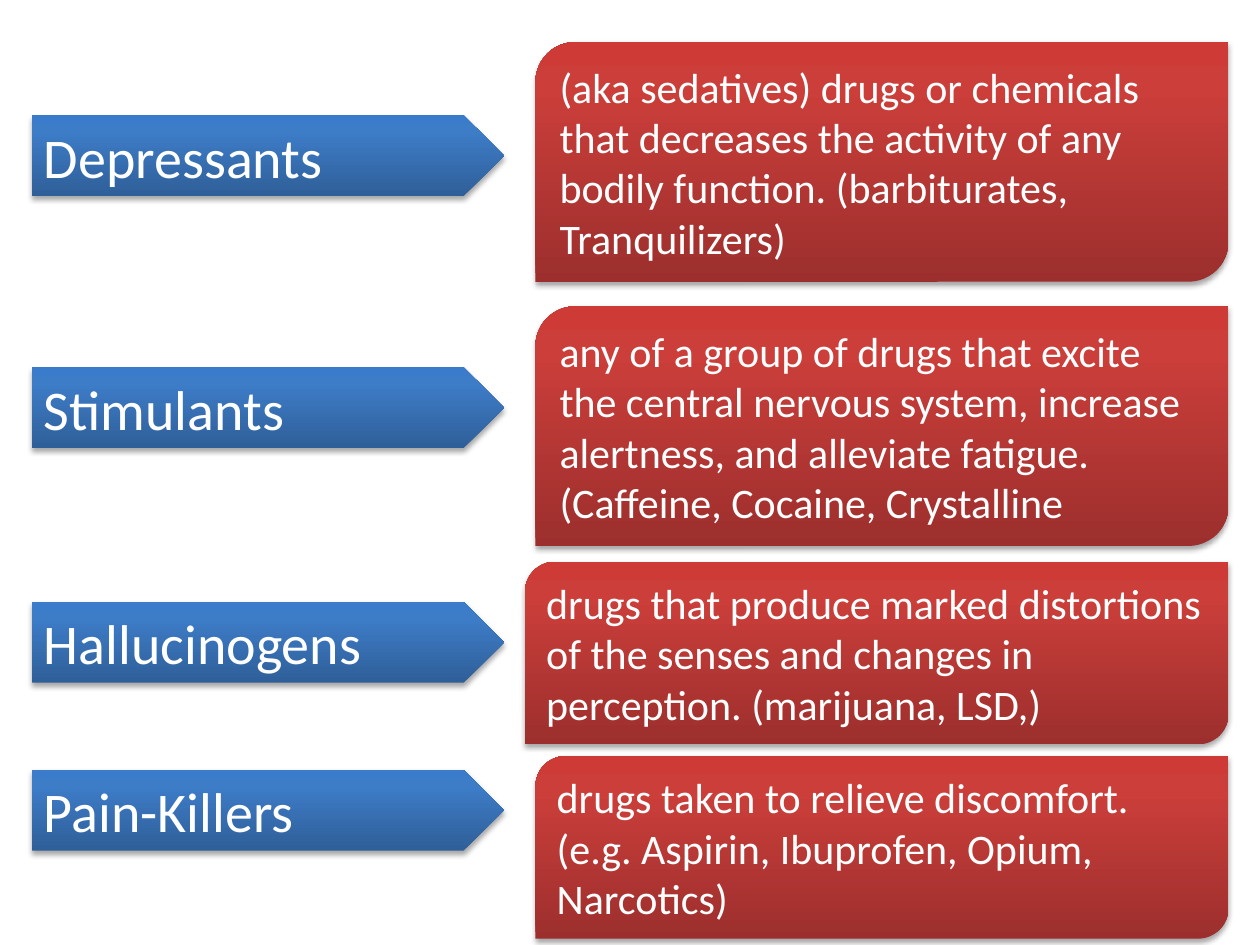
from lxml import etree
from pptx import Presentation
from pptx.dml.color import RGBColor
from pptx.enum import shapes, text
from pptx.oxml import ns
from pptx.util import Pt

COLORS = {
    "text": "FFFFFF",
    "shadow": "000000",
    "blue_dark": "2F5F99", "blue_mid": "3D7CC7", "blue_light": "3A7CCB",
    "red_dark": "9C2F2D", "red_mid": "CB3E3A", "red_light": "CE3B37",
}
STOPS = {"dark": 0, "mid": 80000, "light": 100000}
RIGHT_EDGE = 702
DRUG_TYPES = [
    ("Depressants", 66, 306, 24, 137,
     "(aka sedatives) drugs or chemicals that decreases the activity "
     "of any bodily function. (barbiturates, Tranquilizers)"),
    ("Stimulants", 210, 306, 175, 137,
     "any of a group of drugs that excite the central nervous system, "
     "increase alertness, and alleviate fatigue. (Caffeine, Cocaine, Crystalline"),
    ("Hallucinogens", 344, 300, 321, 104.4,
     "drugs that produce marked distortions of the senses and changes in "
     "perception. (marijuana, LSD,)"),
    ("Pain-Killers", 440, 306, 432, 104.4,
     "drugs taken to relieve discomfort. (e.g. Aspirin, Ibuprofen, Opium, Narcotics)"),
]


def add_child(parent, tag, **attributes):
    child = etree.SubElement(parent, ns.qn(tag))
    for name, value in attributes.items():
        child.set(name, str(value))
    return child


def set_gradient(shape, hue):
    properties = shape._element.spPr
    gradient = add_child(properties, "a:gradFill", rotWithShape=1)
    stops = add_child(gradient, "a:gsLst")
    for shade, position in STOPS.items():
        stop = add_child(stops, "a:gs", pos=position)
        add_child(stop, "a:srgbClr", val=COLORS[f"{hue}_{shade}"])
    add_child(gradient, "a:lin", ang=270 * 60000, scaled=0)
    properties.find(ns.qn("a:ln")).addprevious(gradient)


def set_shadow(shape):
    shape.shadow.inherit = False
    effects = shape._element.spPr.find(ns.qn("a:effectLst"))
    shadow = add_child(effects, "a:outerShdw", blurRad=Pt(3.1), dist=Pt(1.8),
                       dir=90 * 60000, rotWithShape=0)
    color = add_child(shadow, "a:srgbClr", val=COLORS["shadow"])
    add_child(color, "a:alpha", val=35000)


def add_panel(page, kind, bounds, hue, words, size):
    panel = page.shapes.add_shape(kind, *[Pt(length) for length in bounds])
    panel.line.fill.background()
    set_gradient(panel, hue)
    set_shadow(panel)
    frame = panel.text_frame
    frame.text = words
    frame.word_wrap = True
    frame.auto_size = text.MSO_AUTO_SIZE.SHAPE_TO_FIT_TEXT
    frame.vertical_anchor = text.MSO_ANCHOR.MIDDLE
    para = frame.paragraphs[0]
    para.alignment = text.PP_ALIGN.LEFT
    font = para.runs[0].font
    font.name = "Calibri"
    font.size = Pt(size)
    font.color.rgb = RGBColor.from_string(COLORS["text"])


def add_label(page, words, top):
    add_panel(page, shapes.MSO_SHAPE.PENTAGON, (18, top, 270, 46), "blue", words, 32)


def add_definition(page, words, left, top, height):
    bounds = (left, top, RIGHT_EDGE - left, height)
    add_panel(page, shapes.MSO_SHAPE.ROUND_2_DIAG_RECTANGLE, bounds, "red", words, 24)


def main():
    deck = Presentation()
    deck.slide_width, deck.slide_height = Pt(720), Pt(540)
    page = deck.slides.add_slide(deck.slide_layouts[6])
    for name, label_top, *_ in DRUG_TYPES:
        add_label(page, name, label_top)
    for _, _, left, top, height, definition in DRUG_TYPES:
        add_definition(page, definition, left, top, height)
    deck.save("out.pptx")


if __name__ == "__main__":
    main()
